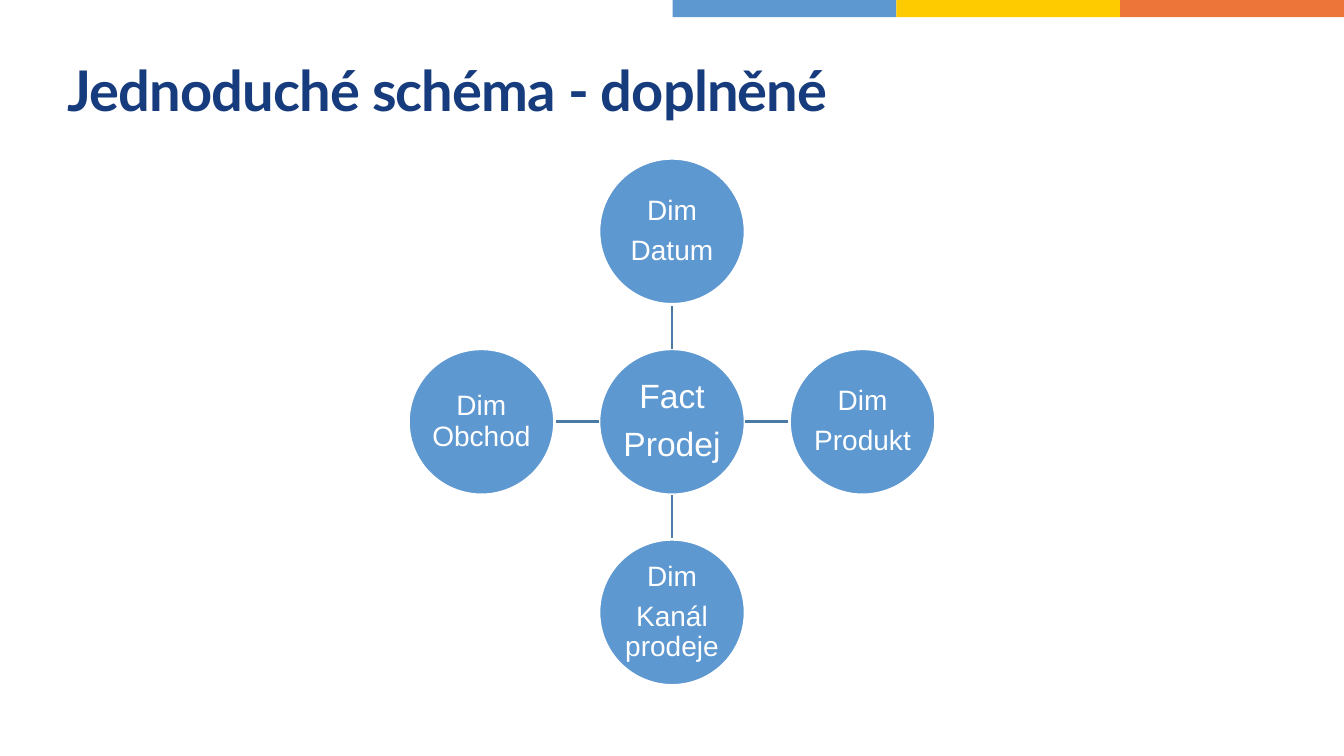
from pptx import Presentation
from pptx.dml.color import RGBColor
from pptx.enum.shapes import MSO_CONNECTOR, MSO_SHAPE
from pptx.enum.text import MSO_ANCHOR, MSO_AUTO_SIZE, PP_ALIGN
from pptx.oxml.ns import qn
from pptx.util import Inches, Pt
from lxml import etree

COLORS = {"blue": "5E98D1", "yellow": "FDCB00", "orange": "ED7539",
          "navy": "163C7D", "link": "4B7AA7", "white": "FFFFFF"}
DIAMETER = 1.45
STEP = 1.89  # distance from the fact's centre to each dimension's centre

# direction from the centre (x, y) and the lines of each dimension
DIMENSIONS = [((0, -1), ["Dim", "Datum"]),
              ((1, 0), ["Dim", "Produkt"]),
              ((0, 1), ["Dim", "Kanál prodeje"]),
              ((-1, 0), ["Dim Obchod"])]


def rgb(name):
    return RGBColor.from_string(COLORS[name])


def set_margins(tf, margin):
    tf.margin_left = tf.margin_right = tf.margin_top = tf.margin_bottom = Inches(margin)


def add_color_bar(slide, left, top, width, height):
    names = ["blue", "yellow", "orange"]
    part = width / len(names)
    for i, name in enumerate(names):
        sp = slide.shapes.add_shape(MSO_SHAPE.RECTANGLE, Inches(left + i * part),
                                    Inches(top), Inches(part), Inches(height))
        sp.shadow.inherit = False
        sp.fill.solid()
        sp.fill.fore_color.rgb = rgb(name)
        sp.line.fill.background()


def set_title(slide, text, left, top, width, height):
    title = slide.shapes.title
    title.left, title.top = Inches(left), Inches(top)
    title.width, title.height = Inches(width), Inches(height)
    tf = title.text_frame
    tf.text = text
    tf.auto_size = MSO_AUTO_SIZE.NONE
    tf.vertical_anchor = MSO_ANCHOR.MIDDLE
    set_margins(tf, 0)
    p = tf.paragraphs[0]
    p.alignment = PP_ALIGN.LEFT
    font = p.runs[0].font
    font.name, font.size, font.bold = "Lato", Pt(40), True
    font.color.rgb = rgb("navy")
    p.runs[0]._r.get_or_add_rPr().set("spc", "-60")


def add_circle(slide, cx, cy, lines, size, margin):
    sp = slide.shapes.add_shape(MSO_SHAPE.OVAL, Inches(cx - DIAMETER / 2),
                                Inches(cy - DIAMETER / 2),
                                Inches(DIAMETER), Inches(DIAMETER))
    sp.shadow.inherit = False
    sp.fill.solid()
    sp.fill.fore_color.rgb = rgb("blue")
    sp.line.color.rgb = rgb("white")
    sp.line.width = Pt(2)
    tf = sp.text_frame
    tf.word_wrap = True
    tf.vertical_anchor = MSO_ANCHOR.MIDDLE
    set_margins(tf, margin)
    for i, line in enumerate(lines):
        p = tf.add_paragraph() if i else tf.paragraphs[0]
        p.text = line
        p.alignment = PP_ALIGN.CENTER
        p.line_spacing = 0.9
        p.space_after = Pt(size * 0.35)
        p.font.name, p.font.size = "Arial", Pt(size)
        p.font.color.rgb = rgb("white")


def add_link(slide, cx, cy, dx, dy):
    """Line from the edge of the fact to the edge of a dimension."""
    near, far = DIAMETER / 2, STEP - DIAMETER / 2
    link = slide.shapes.add_connector(
        MSO_CONNECTOR.STRAIGHT,
        Inches(cx + dx * near), Inches(cy + dy * near),
        Inches(cx + dx * far), Inches(cy + dy * far))
    link.line.color.rgb = rgb("link")
    link.line.width = Pt(2)
    etree.SubElement(link._element.spPr, qn("a:effectLst"))


def add_star_schema(slide, left, top, width, height):
    cx, cy = left + width / 2, top + height / 2
    add_circle(slide, cx, cy, ["Fact", "Prodej"], 24, 0.02)
    for (dx, dy), lines in DIMENSIONS:
        add_link(slide, cx, cy, dx, dy)
        add_circle(slide, cx + dx * STEP, cy + dy * STEP, lines, 20, 0.01)


def main():
    prs = Presentation()
    prs.slide_width, prs.slide_height = Inches(13.33), Inches(7.5)
    slide = prs.slides.add_slide(prs.slide_layouts[5])
    add_color_bar(slide, 6.67, 0, 6.66, 0.17)
    set_title(slide, "Jednoduché schéma - doplněné", 0.67, 0.45, 12, 0.86)
    add_star_schema(slide, 4.05, 1.57, 5.23, 5.23)
    prs.save("out.pptx")


if __name__ == "__main__":
    main()
